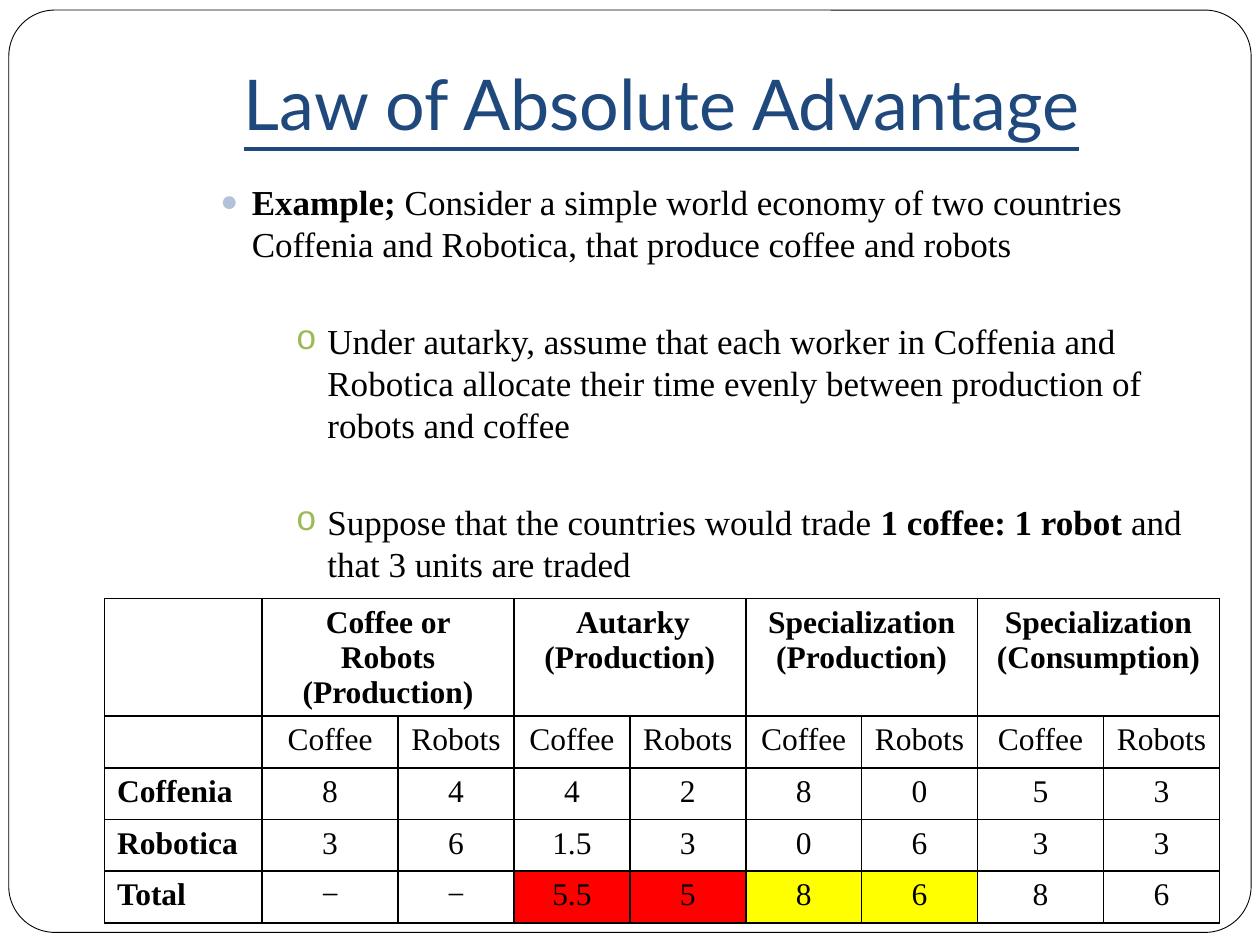
import pptx
import pptx.util
import pptx.dml.color
import pptx.enum.shapes
import pptx.enum.text
import pptx.oxml
import pptx.oxml.ns

Inches = pptx.util.Inches
Pt = pptx.util.Pt
Align = pptx.enum.text.PP_ALIGN
Anchor = pptx.enum.text.MSO_ANCHOR
SERIF = "Times New Roman"
BLACK = "000000"

# Content
TITLE = "Law of Absolute Advantage"
DOT = dict(char="●", font="Arial", color="B3C1DB", size=85, left=0.9, before=0)
RING = dict(char="o", font="Courier New", color="9BBB59", size=100, left=1.5, before=31.4)
# Each bullet: style, then (text, bold) spans
BULLETS = [
    (DOT, [("Example; ", True),
           ("Consider a simple world economy of two countries Coffenia and "
            "Robotica, that produce coffee and robots", False)]),
    (RING, [("Under autarky, assume that each worker in Coffenia and Robotica "
             "allocate their time evenly between production of robots and coffee", False)]),
    (RING, [("Suppose that the countries would trade ", False),
            ("1 coffee: 1 robot ", True),
            ("and that 3 units are traded", False)]),
]
GROUPS = [("Coffee or Robots", "(Production)"), (" Autarky", "(Production)"),
          ("Specialization", "(Production)"), ("Specialization", "(Consumption)")]
ROWS = [
    [""] + ["Coffee", "Robots"] * len(GROUPS),
    ["Coffenia", "8", "4", "4", "2", "8", "0", "5", "3"],
    ["Robotica", "3", "6", "1.5", "3", "0", "6", "3", "3"],
    ["Total", "−", "−", "5.5", "5", "8", "6", "8", "6"],
]
COLUMN_WIDTHS = [1.25, 1.08, 0.92, 0.92, 0.92, 0.92, 0.92, 1, 0.92]
ROW_HEIGHTS = [0.93] + [0.41] * len(ROWS)
TOTAL_FILLS = {3: "FF0000", 4: "FF0000", 5: "FFFF00", 6: "FFFF00"}


def color(value):
    return pptx.dml.color.RGBColor.from_string(value)


def add_span(para, text, tint=BLACK, **formats):
    span = para.add_run()
    span.text = text
    for name, value in formats.items():
        setattr(span.font, name, value)
    span.font.color.rgb = color(tint)


def add_box(page, left, top, width, height, **formats):
    box = page.shapes.add_textbox(*map(Inches, (left, top, width, height)))
    frame = box.text_frame
    frame.word_wrap = True
    for name, value in formats.items():
        setattr(frame, name, value)
    return frame


def parse(xml):
    return pptx.oxml.parse_xml(xml.replace(">", " " + pptx.oxml.ns.nsdecls("a") + ">", 1)
                               if "/>" not in xml.split(">", 1)[0] + ">"
                               else xml.replace("/>", " " + pptx.oxml.ns.nsdecls("a") + "/>", 1))


def set_bullet(para, style):
    properties = para._p.get_or_add_pPr()
    properties.set("marL", str(Inches(style["left"])))
    properties.set("indent", str(Inches(-0.25)))
    for xml in (f'<a:buClr><a:srgbClr val="{style["color"]}"/></a:buClr>',
                f'<a:buSzPct val="{style["size"] * 1000}"/>',
                f'<a:buFont typeface="{style["font"]}"/>',
                f'<a:buChar char="{style["char"]}"/>'):
        properties.append(parse(xml))


def fill_cell(cell, lines, bold, align, fill=None):
    for index, line in enumerate(lines):
        frame = cell.text_frame
        para = frame.paragraphs[0] if index == 0 else frame.add_paragraph()
        para.alignment = align
        para.line_spacing = Pt(20)
        if line:
            add_span(para, line, name=SERIF, size=Pt(18), bold=bold)
    if fill:
        cell.fill.solid()
        cell.fill.fore_color.rgb = color(fill)


def add_borders(cell):
    properties = cell._tc.get_or_add_tcPr()
    for index, side in enumerate(("lnL", "lnR", "lnT", "lnB")):
        properties.insert(index, parse(
            f'<a:{side} w="{Pt(1)}"><a:solidFill><a:srgbClr val="{BLACK}"/>'
            f'</a:solidFill></a:{side}>'))


def main():
    deck = pptx.Presentation()
    deck.slide_width, deck.slide_height = Inches(10), Inches(7.5)
    page = deck.slides.add_slide(deck.slide_layouts[6])

    # Rounded border
    border = page.shapes.add_shape(pptx.enum.shapes.MSO_SHAPE.ROUNDED_RECTANGLE,
                                   *map(Inches, (0.07, 0.08, 9.86, 7.32)))
    border.adjustments[0] = 0.05
    border.shadow.inherit = False
    border.fill.solid()
    border.fill.fore_color.rgb = color("FFFFFF")
    border.line.color.rgb = color(BLACK)
    border.line.width = Pt(0.5)

    # Title
    title = add_box(page, 1, 0.3, 8.5, 0.95, vertical_anchor=Anchor.BOTTOM,
                    margin_bottom=Inches(0.1))
    title.paragraphs[0].alignment = Align.CENTER
    add_span(title.paragraphs[0], TITLE, "1F497D", name="Lato", size=Pt(40), underline=True)

    # Bullets
    body = add_box(page, 1, 1, 8.5, 5.33, margin_top=Inches(0.43))
    for index, (style, spans) in enumerate(BULLETS):
        para = body.paragraphs[0] if index == 0 else body.add_paragraph()
        para.line_spacing = Pt(24)
        para.space_before = Pt(style["before"])
        set_bullet(para, style)
        for text, bold in spans:
            add_span(para, text, name=SERIF, size=Pt(20), bold=bold)

    # Table
    table = page.shapes.add_table(
        len(ROW_HEIGHTS), len(COLUMN_WIDTHS), Inches(0.83), Inches(4.75),
        Inches(sum(COLUMN_WIDTHS)), Inches(sum(ROW_HEIGHTS))).table
    table.first_row = table.horz_banding = False
    for column, width in zip(table.columns, COLUMN_WIDTHS):
        column.width = Inches(width)
    for row, height in zip(table.rows, ROW_HEIGHTS):
        row.height = Inches(height)
    for cell in table.iter_cells():
        cell.fill.background()
        add_borders(cell)
    for index, lines in enumerate(GROUPS):
        first = 1 + 2 * index
        table.cell(0, first).merge(table.cell(0, first + 1))
        fill_cell(table.cell(0, first), lines, True, Align.CENTER)
    for row, values in enumerate(ROWS, 1):
        for column, value in enumerate(values):
            is_label = column == 0
            fill = TOTAL_FILLS.get(column) if row == len(ROWS) else None
            fill_cell(table.cell(row, column), [value], is_label,
                      Align.LEFT if is_label else Align.CENTER, fill)

    deck.save("out.pptx")


if __name__ == "__main__":
    main()
